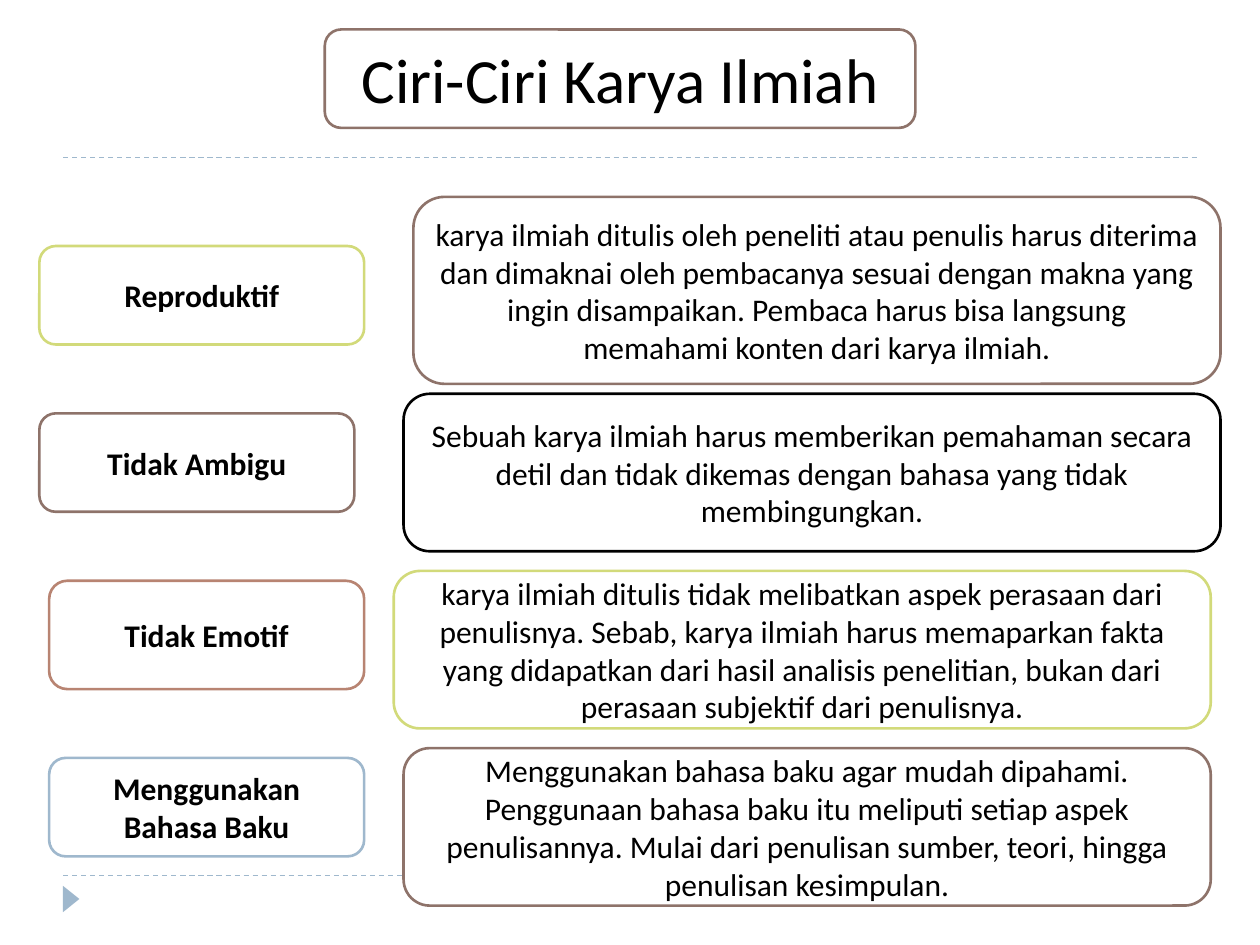
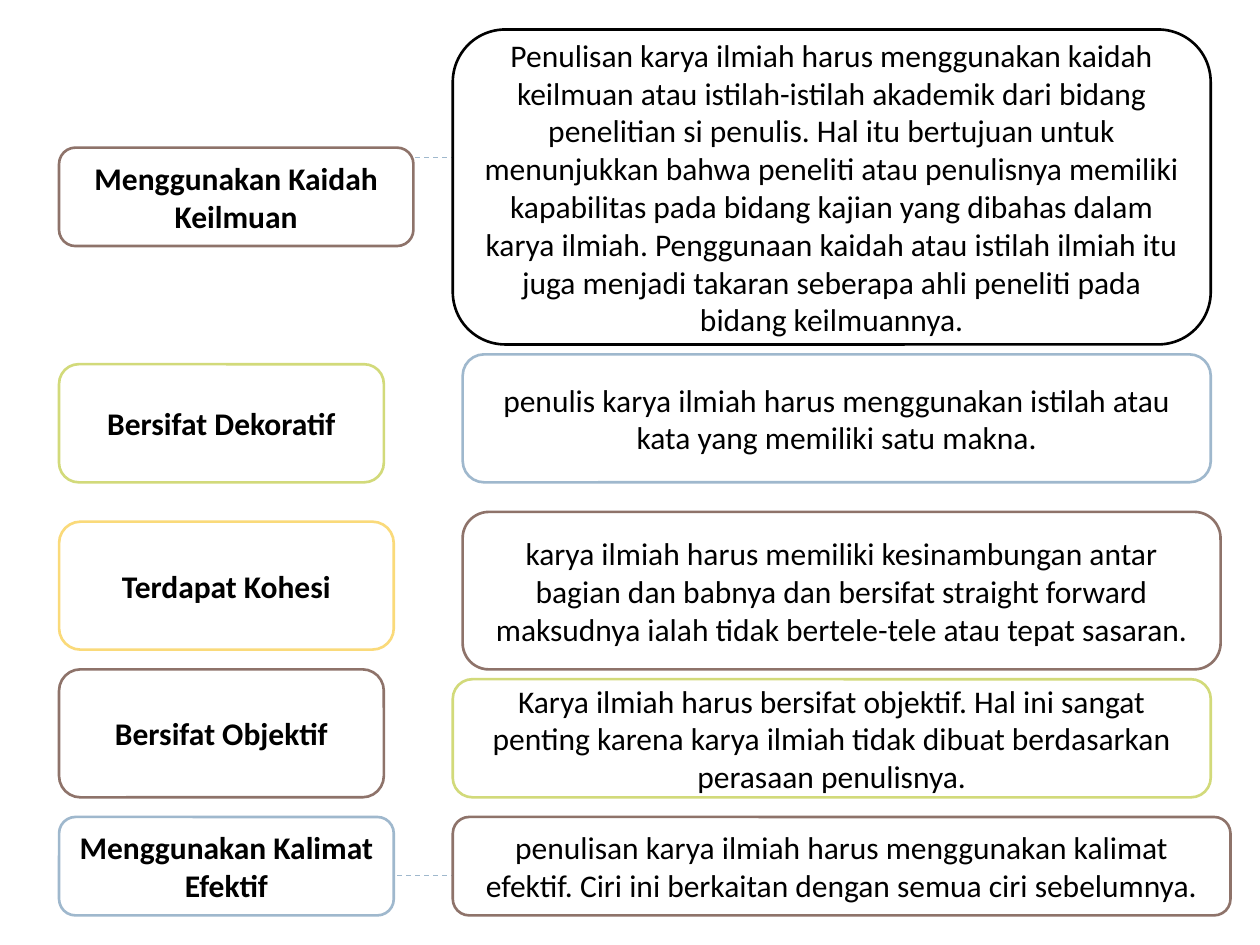
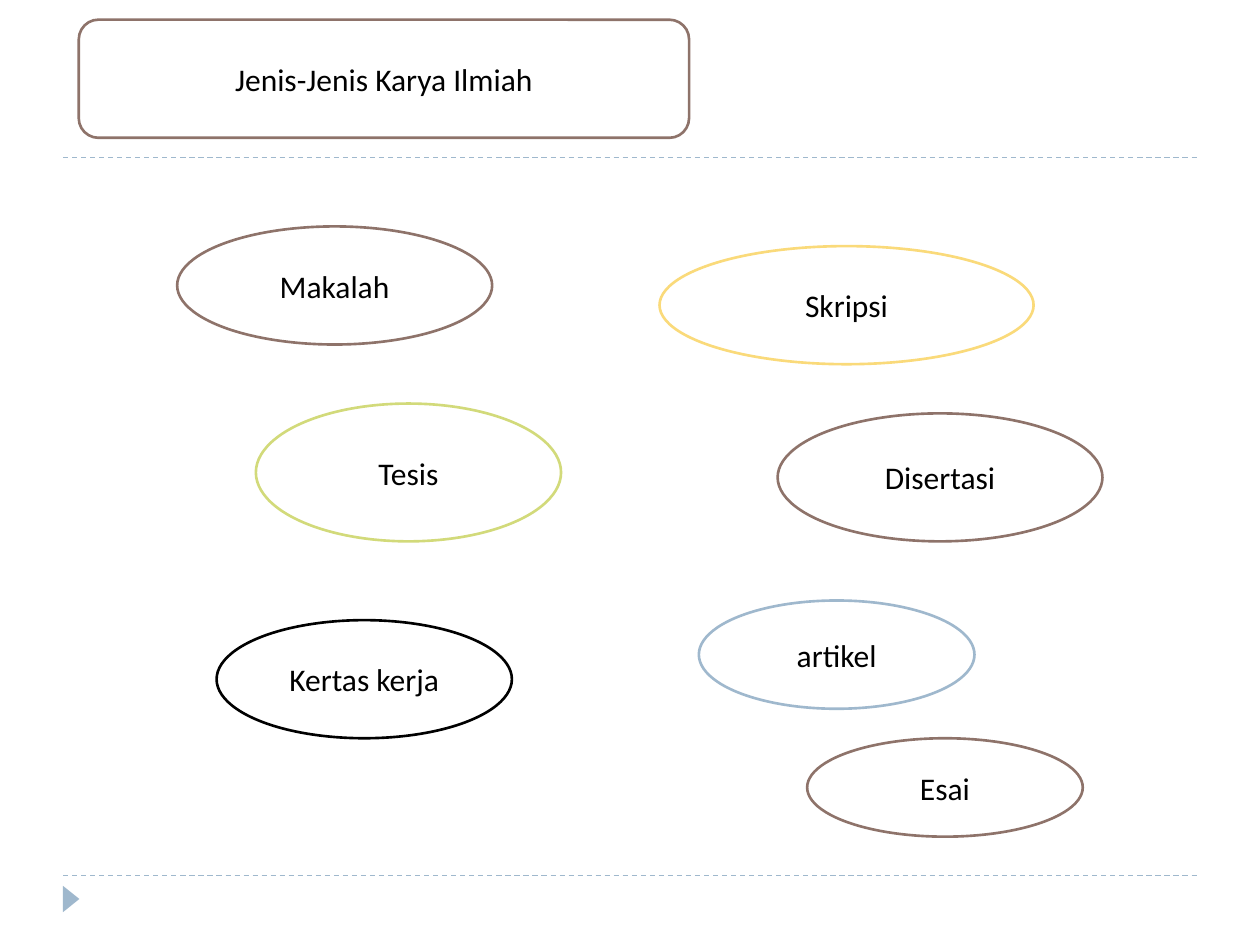
from lxml import etree
from pptx import Presentation
from pptx.dml.color import RGBColor
from pptx.enum.dml import MSO_LINE
from pptx.enum.shapes import MSO_CONNECTOR, MSO_SHAPE
from pptx.enum.text import MSO_ANCHOR, PP_ALIGN
from pptx.oxml.ns import qn
from pptx.util import Pt

ROUNDED = MSO_SHAPE.ROUNDED_RECTANGLE
OVAL = MSO_SHAPE.OVAL
TRIANGLE = MSO_SHAPE.ISOSCELES_TRIANGLE
STRAIGHT = MSO_CONNECTOR.STRAIGHT
DASH = MSO_LINE.DASH
MIDDLE = MSO_ANCHOR.MIDDLE
CENTER = PP_ALIGN.CENTER

COLORS = {
    "white": "FFFFFF",
    "black": "000000",
    "brown": "8E736A",
    "lime": "D2DA7A",
    "clay": "B88472",
    "blue": "9FB8CD",
    "yellow": "FADA7A",
}
FONT = "Calibri"
PAGE_WIDTH, PAGE_HEIGHT = 720, 540
GRID = PAGE_WIDTH / 128
MARGIN = 36
RULE_HEIGHTS = (90, 500.4)
MARKER_BOX = (33.1, 509, 15.1, 9.4)

TRAIT_ROWS = [
    ("Reproduktif", "lime", (4, 25, 33, 10),
     "karya ilmiah ditulis oleh peneliti atau penulis harus diterima dan dimaknai oleh "
     "pembacanya sesuai dengan makna yang ingin disampaikan. Pembaca harus bisa langsung "
     "memahami konten dari karya ilmiah.", "brown", (42, 20, 82, 19)),
    ("Tidak Ambigu", "brown", (4, 42, 32, 10),
     "Sebuah karya ilmiah harus memberikan pemahaman secara detil dan tidak dikemas dengan "
     "bahasa yang tidak membingungkan.", "black", (41, 40, 83, 16)),
    ("Tidak Emotif", "clay", (5, 59, 32, 11),
     "karya ilmiah ditulis tidak melibatkan aspek perasaan dari penulisnya. Sebab, karya "
     "ilmiah harus memaparkan fakta yang didapatkan dari hasil analisis penelitian, bukan "
     "dari perasaan subjektif dari penulisnya.", "lime", (40, 58, 83, 16)),
    ("Menggunakan Bahasa Baku", "blue", (5, 77, 32, 10),
     "Menggunakan bahasa baku agar mudah dipahami. Penggunaan bahasa baku itu meliputi "
     "setiap aspek penulisannya. Mulai dari penulisan sumber, teori, hingga penulisan "
     "kesimpulan.", "brown", (41, 76, 82, 16)),
]
MORE_TRAIT_ROWS = [
    ("Menggunakan Kaidah Keilmuan", "brown", (6, 15, 36, 10),
     "Penulisan karya ilmiah harus menggunakan kaidah keilmuan atau istilah-istilah akademik "
     "dari bidang penelitian si penulis. Hal itu bertujuan untuk menunjukkan bahwa peneliti "
     "atau penulisnya memiliki kapabilitas pada bidang kajian yang dibahas dalam karya "
     "ilmiah. Penggunaan kaidah atau istilah ilmiah itu juga menjadi takaran seberapa ahli "
     "peneliti pada bidang keilmuannya.", "black", (46, 3, 77, 32)),
    ("Bersifat Dekoratif", "lime", (6, 37, 33, 12),
     "penulis karya ilmiah harus menggunakan istilah atau kata yang memiliki satu makna.",
     "blue", (47, 36, 76, 13)),
    ("Terdapat Kohesi", "yellow", (6, 53, 34, 13),
     "karya ilmiah harus memiliki kesinambungan antar bagian dan babnya dan bersifat straight "
     "forward maksudnya ialah tidak bertele-tele atau tepat sasaran.",
     "brown", (47, 52, 77, 16)),
    ("Bersifat Objektif", "brown", (6, 68, 33, 13),
     "Karya ilmiah harus bersifat objektif. Hal ini sangat penting karena karya ilmiah tidak "
     "dibuat berdasarkan perasaan penulisnya.", "lime", (46, 69, 77, 12)),
    ("Menggunakan Kalimat Efektif", "blue", (6, 83, 34, 10),
     "penulisan karya ilmiah harus menggunakan kalimat efektif. Ciri ini berkaitan dengan "
     "semua ciri sebelumnya.", "brown", (46, 83, 79, 10)),
]
PAPER_TYPES = [
    ("Makalah", "brown", (18, 23, 32, 12)),
    ("Skripsi", "yellow", (67, 25, 38, 12)),
    ("Tesis", "lime", (26, 41, 31, 14)),
    ("Disertasi", "brown", (79, 42, 33, 13)),
    ("Kertas kerja", "black", (22, 63, 30, 12)),
    ("artikel", "blue", (71, 61, 28, 11)),
    ("Esai", "brown", (82, 75, 28, 10)),
]


def rgb(name):
    return RGBColor.from_string(COLORS[name])


def add_outlined(page, kind, text, outline, box, size=18, bold=False):
    shape = page.shapes.add_shape(kind, *(Pt(GRID * cells) for cells in box))
    shape.shadow.inherit = False
    shape.fill.solid()
    shape.fill.fore_color.rgb = rgb("white")
    shape.line.color.rgb = rgb(outline)
    shape.line.width = Pt(1.5)
    frame = shape.text_frame
    frame.word_wrap = True
    frame.vertical_anchor = MIDDLE
    para = frame.paragraphs[0]
    para.text = text
    para.alignment = CENTER
    para.font.name = FONT
    para.font.size = Pt(size)
    para.font.bold = bold
    para.font.color.rgb = rgb("black")


def add_rule(page, top):
    rule = page.shapes.add_connector(
        STRAIGHT, Pt(MARGIN), Pt(top), Pt(PAGE_WIDTH - MARGIN), Pt(top))
    rule.line.color.rgb = rgb("blue")
    rule.line.width = Pt(0.75)
    rule.line.dash_style = DASH
    etree.SubElement(rule._element.spPr, qn("a:effectLst"))


def add_marker(page, box):
    marker = page.shapes.add_shape(TRIANGLE, *map(Pt, box))
    marker.shadow.inherit = False
    marker.rotation = 90
    marker.fill.solid()
    marker.fill.fore_color.rgb = rgb("blue")
    marker.line.fill.background()


def add_page(deck, with_marker=True):
    page = deck.slides.add_slide(deck.slide_layouts[6])
    for top in RULE_HEIGHTS:
        add_rule(page, top)
    if with_marker:
        add_marker(page, MARKER_BOX)
    return page


def add_trait_rows(page, rows):
    for label, label_color, label_box, detail, detail_color, detail_box in rows:
        add_outlined(page, ROUNDED, label, label_color, label_box, bold=True)
        add_outlined(page, ROUNDED, detail, detail_color, detail_box)


def build_traits(deck):
    page = add_page(deck)
    add_outlined(page, ROUNDED, "Ciri-Ciri Karya Ilmiah", "brown", (33, 3, 60, 10), size=36)
    add_trait_rows(page, TRAIT_ROWS)


def build_more_traits(deck):
    page = add_page(deck, with_marker=False)
    add_trait_rows(page, MORE_TRAIT_ROWS)


def build_paper_types(deck):
    page = add_page(deck)
    add_outlined(page, ROUNDED, "Jenis-Jenis Karya Ilmiah", "brown", (8, 2, 62, 12))
    for name, outline, box in PAPER_TYPES:
        add_outlined(page, OVAL, name, outline, box)


def main():
    deck = Presentation()
    deck.slide_width = Pt(PAGE_WIDTH)
    deck.slide_height = Pt(PAGE_HEIGHT)
    build_traits(deck)
    build_more_traits(deck)
    build_paper_types(deck)
    deck.save("out.pptx")


if __name__ == "__main__":
    main()
